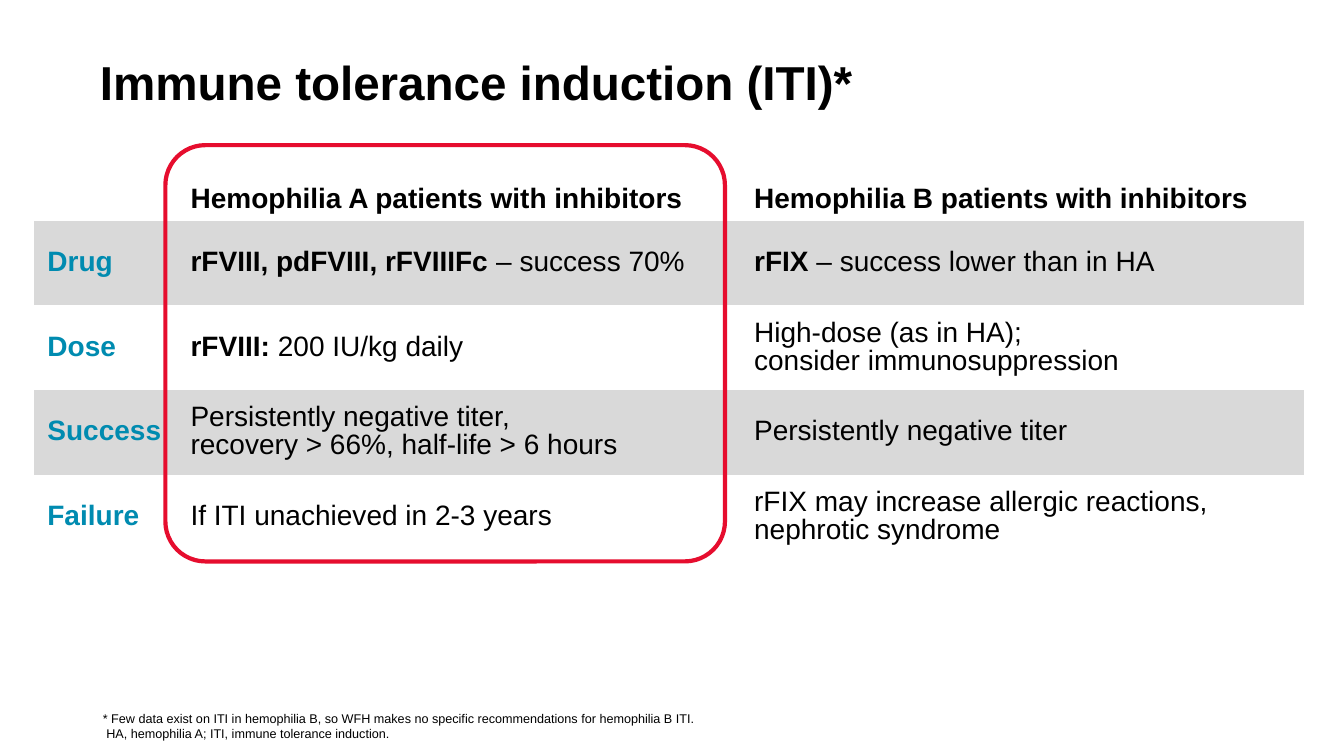
from lxml.etree import SubElement
from pptx import Presentation
from pptx.dml.color import RGBColor
from pptx.enum.shapes import MSO_SHAPE
from pptx.enum.text import MSO_ANCHOR, MSO_AUTO_SIZE, PP_ALIGN
from pptx.oxml.ns import qn
from pptx.util import Inches, Pt

# Content: each cell is a list of lines, each line a (bold part, plain part)
TITLE = "Immune tolerance induction (ITI)*"
HEADS = ["Hemophilia A patients with inhibitors",
         "Hemophilia B patients with inhibitors"]
ROWS = [
    ("Drug", [("rFVIII, pdFVIII, rFVIIIFc", " – success 70%")],
     [("rFIX", " – success lower than in HA")]),
    ("Dose", [("rFVIII: ", "200 IU/kg daily")],
     [("", "High-dose (as in HA);"), ("", "consider immunosuppression")]),
    ("Success", [("", "Persistently negative titer,"),
                 ("", "recovery > 66%, half-life > 6 hours")],
     [("", "Persistently negative titer")]),
    ("Failure", [("", "If ITI unachieved in 2-3 years")],
     [("", "rFIX may increase allergic reactions, nephrotic syndrome")]),
]
NOTES = [
    "* Few data exist on ITI in hemophilia B, so WFH makes no specific "
    "recommendations for hemophilia B ITI.",
    " HA, hemophilia A; ITI, immune tolerance induction.",
]

# Style and grid
FONT = "Arial"
BLACK = RGBColor(0x00, 0x00, 0x00)
WHITE = RGBColor(0xFF, 0xFF, 0xFF)
GRAY = RGBColor(0xD9, 0xD9, 0xD9)
TEAL = RGBColor(0x00, 0x8B, 0xB0)
RED = RGBColor(0xE6, 0x0D, 0x2E)
PLAIN = "{2D5ABB26-0587-4C30-8999-92F81FD0307C}"  # table style without grid
LEFT, TOP = 0.34, 1.42
COLS = [1.42, 5.59, 5.58]
HEAD, ROW = 0.77, 0.84
HIGH = HEAD + ROW * len(ROWS)


def place(shape, *box):
    shape.left, shape.top, shape.width, shape.height = map(Inches, box)


def style(para, size, color=BLACK, bold=False, space=0.9):
    para.alignment = PP_ALIGN.LEFT
    para.line_spacing = space
    para.space_before = Pt(0)
    font = para.font
    font.name, font.size, font.bold = FONT, Pt(size), bold
    font.color.rgb = color


def fill(cell, lines, color=BLACK):
    frame = cell.text_frame
    for i, (strong, rest) in enumerate(lines):
        para = frame.add_paragraph() if i else frame.paragraphs[0]
        style(para, 20, color, bold=not rest)
        for text, bold in ((strong, True), (rest, False)):
            if text:
                run = para.add_run()
                run.text = text
                if strong and rest:
                    run.font.bold = bold


deck = Presentation()
deck.slide_width, deck.slide_height = Inches(13.33), Inches(7.5)
slide = deck.slides.add_slide(deck.slide_layouts[1])
title, notes = slide.placeholders

# Title
place(title, 0.89, 0.25, 11.5, 1.19)
frame = title.text_frame
frame.text = TITLE
frame.auto_size = MSO_AUTO_SIZE.NONE
frame.vertical_anchor = MSO_ANCHOR.MIDDLE
style(frame.paragraphs[0], 34, bold=True)

# Table
grid = slide.shapes.add_table(
    len(ROWS) + 1, len(COLS), Inches(LEFT), Inches(TOP),
    Inches(sum(COLS)), Inches(HIGH))
table = grid.table
table.first_row = table.horz_banding = False
table._tbl.tblPr.find(qn("a:tableStyleId")).text = PLAIN
for col, wide in zip(table.columns, COLS):
    col.width = Inches(wide)
for r, row in enumerate(table.rows):
    row.height = Inches(ROW if r else HEAD)
    for cell in row.cells:
        cell.fill.solid()
        cell.fill.fore_color.rgb = GRAY if r % 2 else WHITE
        cell.margin_left = cell.margin_right = Inches(0.13)
        cell.margin_top = cell.margin_bottom = Inches(0.07)
        cell.vertical_anchor = MSO_ANCHOR.MIDDLE if r else MSO_ANCHOR.BOTTOM
for c, head in enumerate(HEADS, 1):
    fill(table.cell(0, c), [(head, "")])
for r, (label, *cells) in enumerate(ROWS, 1):
    fill(table.cell(r, 0), [(label, "")], TEAL)
    for c, lines in enumerate(cells, 1):
        fill(table.cell(r, c), lines)

# Frame around the hemophilia A column
ring = slide.shapes.add_shape(
    MSO_SHAPE.ROUNDED_RECTANGLE, Inches(1.64), Inches(1.44),
    Inches(5.55), Inches(4.13))
ring.adjustments[0] = 0.096
ring.shadow.inherit = False
ring.fill.background()
ring.line.color.rgb = RED
ring.line.width = Pt(3)

# Footnotes
place(notes, 0.92, 6.95, 10.85, 0.4)
frame = notes.text_frame
frame.auto_size = MSO_AUTO_SIZE.NONE
frame.vertical_anchor = MSO_ANCHOR.BOTTOM
frame.margin_bottom = 0
frame.text = "\n".join(NOTES)
for para in frame.paragraphs:
    props = para._p.get_or_add_pPr()
    props.set("marL", "0")
    props.set("indent", "0")
    SubElement(props, qn("a:buNone"))
    style(para, 9, space=1.0)

deck.save("out.pptx")
